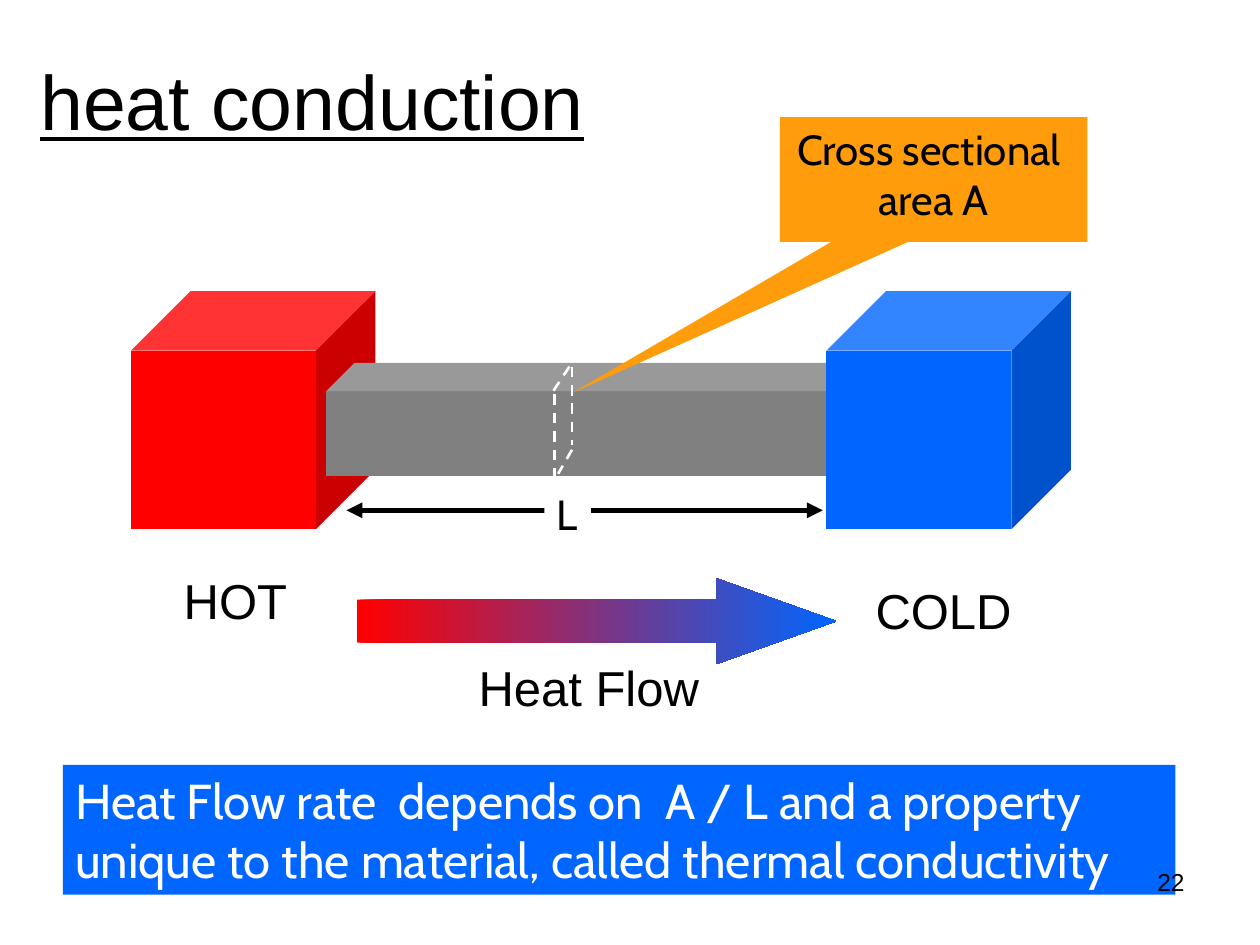
from collections import namedtuple

from lxml import etree
from pptx import Presentation
from pptx.dml.color import RGBColor
from pptx.enum import dml, shapes, text
from pptx.oxml import ns
from pptx.util import Inches, Pt

COLORS = {"hot": "FF0000", "cold": "0066FF", "rod": "808080",
          "callout": "FF9C0B", "ink": "000000", "paper": "FFFFFF"}
SHAPE = shapes.MSO_SHAPE
ALIGN = text.PP_ALIGN
Box = namedtuple("Box", "left top width height")


def color(name):
    return RGBColor.from_string(COLORS[name])


def inside(box, left, top, width, height):
    """Return a box offset from the corner of another box."""
    return Box(box.left + left, box.top + top, width, height)


def write(shape, words, size, font="Arial", ink="ink", align=ALIGN.LEFT,
          wrap=False, anchor=text.MSO_ANCHOR.TOP):
    frame = shape.text_frame
    frame.text = words
    frame.word_wrap = wrap
    frame.vertical_anchor = anchor
    for para in frame.paragraphs:
        para.alignment = align
        for span in para.runs:
            span.font.size = Pt(size)
            span.font.name = font
            span.font.color.rgb = color(ink)


def add_label(page, box, words, size=28, **style):
    label = page.shapes.add_textbox(*map(Inches, box))
    write(label, words, size, **style)


def add_solid(page, kind, box, fill):
    shape = page.shapes.add_shape(kind, *map(Inches, box))
    shape.shadow.inherit = False
    shape.line.fill.background()
    shape.fill.solid()
    shape.fill.fore_color.rgb = color(fill)
    return shape


def add_line(parts, box, start, end, ink, width):
    ends = [Inches(v) for x, y in (start, end) for v in (box.left + x, box.top + y)]
    line = parts.add_connector(shapes.MSO_CONNECTOR.STRAIGHT, *ends)
    line.line.color.rgb = color(ink)
    line.line.width = Pt(width)
    etree.SubElement(line._element.spPr, ns.qn("a:effectLst"))
    return line


def add_title(page, box):
    title = page.shapes.title
    title.left, title.top, title.width, title.height = map(Inches, box)
    write(title, "heat conduction", 44, wrap=True, anchor=text.MSO_ANCHOR.MIDDLE)
    title.text_frame.paragraphs[0].runs[0].font.underline = True


def add_apparatus(page, box):
    """Draw the hot and cold blocks joined by a rod, with their names."""
    cube = 1.94, 1.89
    add_solid(page, SHAPE.CUBE, inside(box, 0, 0, *cube), "hot")
    add_solid(page, SHAPE.CUBE, inside(box, 1.55, 0.57, 4.37, 0.9), "rod")
    add_solid(page, SHAPE.CUBE, inside(box, box.width - cube[0], 0, *cube), "cold")
    add_label(page, inside(box, 0.32, 2.17, 1.02, 0.57), "HOT")
    add_label(page, inside(box, 5.81, 2.25, 1.28, 0.57), "COLD")


def add_cross_section(page, box):
    """Outline a slice of the rod with dashed edges."""
    edges = [((0.14, 0), (0, 0.21)), ((0.02, 0.22), (0.02, 0.87)),
             ((0.16, 0), (0.16, 0.62)), ((0.16, 0.66), (0.05, 0.85))]
    group = page.shapes.add_group_shape()
    for start, end in edges:
        edge = add_line(group.shapes, box, start, end, "paper", 1.5)
        edge.line.dash_style = dml.MSO_LINE.DASH


def add_callout(page, box, tip):
    callout = add_solid(page, SHAPE.RECTANGULAR_CALLOUT, box, "callout")
    callout.adjustments[0] = (tip[0] - box.left) / box.width - 0.5
    callout.adjustments[1] = (tip[1] - box.top) / box.height - 0.5
    write(callout, "Cross sectional \narea A", 24, "Cabin", align=ALIGN.CENTER, wrap=True)


def add_length(page, box):
    """Draw the double-headed dimension line with its letter."""
    middle = box.height / 2
    line = add_line(page.shapes, box, (0, middle), (box.width, middle), "ink", 3)
    outline = line.line._get_or_add_ln()
    for end in ("a:headEnd", "a:tailEnd"):
        etree.SubElement(outline, ns.qn(end), type="triangle")
    letter = add_solid(page, SHAPE.RECTANGLE, inside(box, 1.57, 0.03, 0.37, 0.5), "paper")
    write(letter, "L", 24, "Cabin")


def add_heat_flow(page, box):
    arrow = add_solid(page, SHAPE.RIGHT_ARROW, box, "hot")
    arrow.adjustments[1] = 1.4
    arrow.fill.gradient()
    arrow.fill.gradient_angle = 0
    for stop, name, place in zip(arrow.fill.gradient_stops, ("hot", "cold"), (0, 1)):
        stop.color.rgb = color(name)
        stop.position = place
    add_label(page, inside(box, 0.87, 0.58, 1.95, 0.57), "Heat Flow")


def add_conclusion(page, box):
    banner = add_solid(page, SHAPE.RECTANGLE, box, "cold")
    write(banner, "Heat Flow rate  depends on  A / L and a property\n"
          "unique to the material, called thermal conductivity", 28, "Cabin", "paper")


def main():
    deck = Presentation()
    deck.slide_width, deck.slide_height = Inches(10), Inches(7.5)
    page = deck.slides.add_slide(deck.slide_layouts.get_by_name("Title Only"))
    add_title(page, Box(0.22, 0.17, 4.55, 1.25))
    add_apparatus(page, Box(1.04, 2.31, 7.46, 1.89))
    add_cross_section(page, Box(4.38, 2.91, 0.16, 0.87))
    add_callout(page, Box(6.19, 0.93, 2.44, 0.99), tip=(4.54, 3.12))
    add_length(page, Box(2.75, 3.8, 3.78, 0.5))
    add_conclusion(page, Box(0.5, 6.07, 8.83, 1.03))
    add_heat_flow(page, Box(2.83, 4.59, 3.81, 0.68))
    add_label(page, Box(7.17, 6.83, 2.33, 0.52), "22", 14, align=ALIGN.RIGHT, wrap=True)
    deck.save("out.pptx")


if __name__ == "__main__":
    main()
